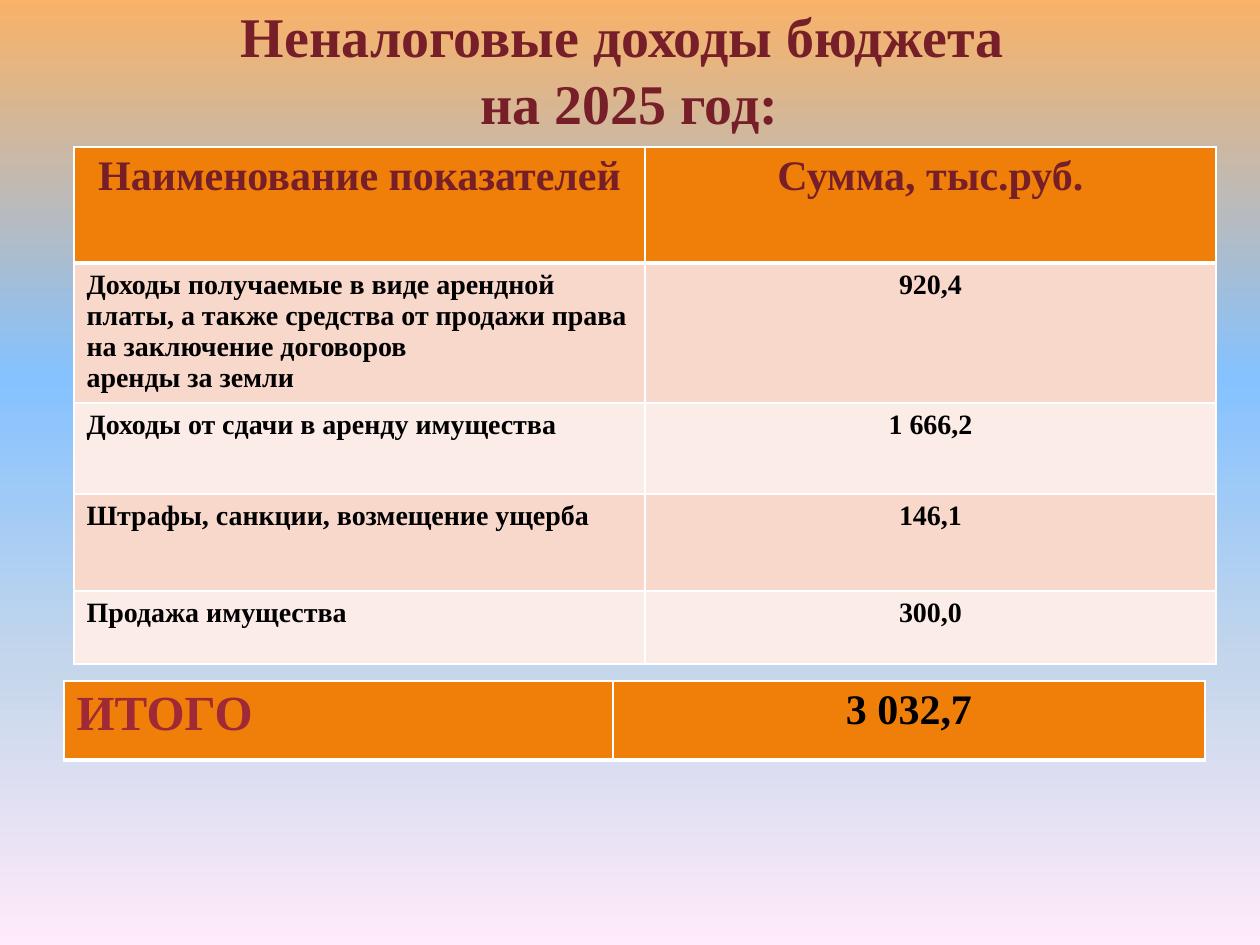
from dataclasses import dataclass

from lxml import etree
from pptx import Presentation
from pptx import util as u
from pptx.dml.color import RGBColor
from pptx.enum import text
from pptx.oxml.ns import qn


@dataclass(frozen=True)
class Theme:
    font: str = "Times New Roman"
    wine: str = "771F28"
    red: str = "9F2936"
    ink: str = "000000"
    head: str = "F07F09"
    bands: tuple = ("F9D8CC", "FCECE7")
    rule: str = "FFFFFF"
    sky: tuple = ((0, "F9B268"), (40, "85C2FF"), (70, "C4D6EB"), (100, "FFEBFA"))
    title: int = 32
    total: int = 28
    label: int = 24
    body: int = 16


T = Theme()
LEFT, MID = text.PP_ALIGN.LEFT, text.PP_ALIGN.CENTER
HEADS = ("Наименование показателей", "Сумма, тыс.руб.")
ITEMS = (
    ("Доходы получаемые в виде арендной платы, а также средства от продажи "
     "права на заключение договоров\nаренды за земли", "920,4"),
    ("Доходы от сдачи в аренду имущества", "1 666,2"),
    ("Штрафы, санкции, возмещение ущерба", "146,1"),
    ("Продажа имущества", "300,0"),
)
TOTAL = ("ИТОГО", "3 032,7")


def px(n):
    return u.Emu(round(n * 914400 / 126))


def style(frame, size, color, align):
    for para in frame.paragraphs:
        para.alignment = align
        font = para.font
        font.name, font.size, font.bold = T.font, u.Pt(size), True
        font.color.rgb = RGBColor.from_string(color)


def paint_sky(slide):
    fill = slide.background.fill
    fill.gradient()
    fill.gradient_angle = 270
    stops = slide.element.find(".//" + qn("a:gsLst"))
    for old in list(stops):
        stops.remove(old)
    for pos, color in T.sky:
        stop = etree.SubElement(stops, qn("a:gs"), pos=str(pos * 1000))
        etree.SubElement(stop, qn("a:srgbClr"), val=color)


def add_title(slide, box):
    title = slide.shapes.title
    title.left, title.top, title.width, title.height = map(px, box)
    frame = title.text_frame
    frame.text = "Неналоговые доходы бюджета\v на 2025 год:"
    frame.vertical_anchor = text.MSO_ANCHOR.MIDDLE
    style(frame, T.title, T.wine, MID)


def rule_cell(cell, top, bottom):
    """Draw the four borders; top and bottom are widths in points."""
    props = cell._tc.get_or_add_tcPr()
    sides = (("L", 1), ("R", 1), ("T", top), ("B", bottom))
    for i, (side, width) in enumerate(sides):
        line = etree.Element(qn("a:ln" + side), w=str(u.Pt(width)))
        fill = etree.SubElement(line, qn("a:solidFill"))
        etree.SubElement(fill, qn("a:srgbClr"), val=T.rule)
        props.insert(i, line)


def fill_cell(cell, words, fill, size, color, align):
    cell.text = words
    cell.fill.solid()
    cell.fill.fore_color.rgb = RGBColor.from_string(fill)
    style(cell.text_frame, size, color, align)


def add_grid(slide, spot, cols, rows):
    """Add a table whose first row is closed by a thick rule."""
    box = (*spot, sum(cols), sum(rows))
    grid = slide.shapes.add_table(len(rows), len(cols), *map(px, box)).table
    grid.horz_banding = False
    for col, width in zip(grid.columns, cols):
        col.width = px(width)
    for i, (row, height) in enumerate(zip(grid.rows, rows)):
        row.height = px(height)
        for cell in row.cells:
            rule_cell(cell, 3 if i == 1 else 1, 3 if i == 0 else 1)
    return grid


def add_items(slide, spot):
    grid = add_grid(slide, spot, (571, 571), (116, 140, 91, 97, 73))
    for col, words in enumerate(HEADS):
        fill_cell(grid.cell(0, col), words, T.head, T.label, T.wine, MID)
    for i, item in enumerate(ITEMS):
        for col, (words, align) in enumerate(zip(item, (LEFT, MID))):
            fill_cell(grid.cell(i + 1, col), words, T.bands[i % 2],
                      T.body, T.ink, align)


def add_total(slide, spot):
    grid = add_grid(slide, spot, (549, 592), (79,))
    name, value = TOTAL
    fill_cell(grid.cell(0, 0), name, T.head, T.total, T.red, LEFT)
    fill_cell(grid.cell(0, 1), value, T.head, T.label, T.ink, MID)


def main():
    deck = Presentation()
    deck.slide_width, deck.slide_height = px(1260), px(945)
    slide = deck.slides.add_slide(deck.slide_layouts[5])
    paint_sky(slide)
    add_title(slide, (63, 0, 1119, 137))
    add_items(slide, (74, 147))
    add_total(slide, (64, 681))
    deck.save("out.pptx")


if __name__ == "__main__":
    main()
